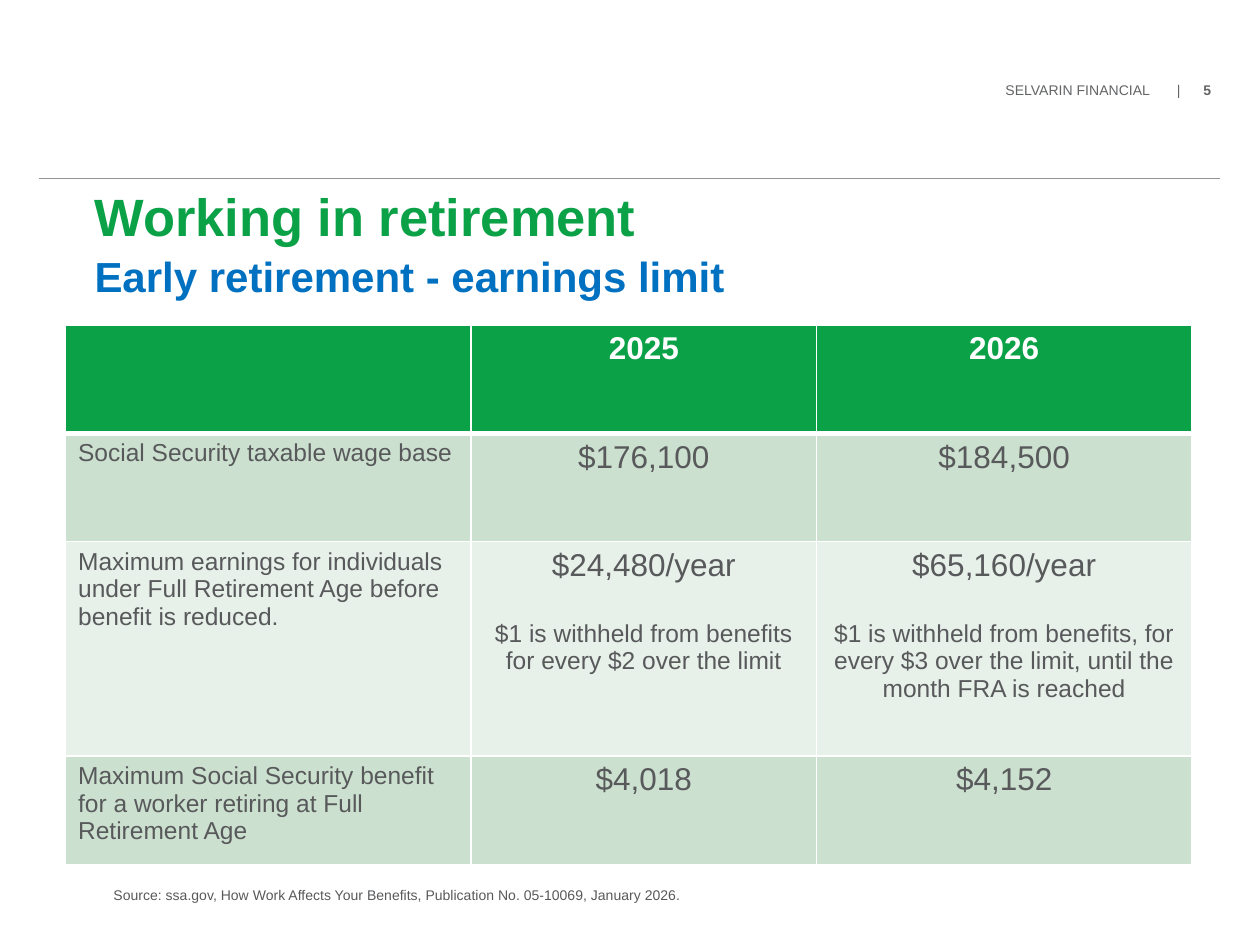
from dataclasses import dataclass

from lxml import etree
from pptx import Presentation
from pptx.dml.color import RGBColor
from pptx.enum import shapes, text
from pptx.oxml import ns
from pptx.util import Inches, Pt


@dataclass(frozen=True)
class Theme:
    font: str = "Arial"
    green: str = "0AA147"
    blue: str = "0070C0"
    body: str = "58595B"
    header: str = "636466"
    rule: str = "929497"
    white: str = "FFFFFF"
    band_dark: str = "CCE0CF"
    band_light: str = "E7F0E9"
    title_size: int = 30
    subtitle_size: int = 24
    figure_size: int = 18
    label_size: int = 14
    small_size: int = 8


theme = Theme()


def style(font, size, color, bold=False):
    font.name = theme.font
    font.size = Pt(size)
    font.bold = bold
    font.color.rgb = RGBColor.from_string(color)


def set_border(cell, side, points):
    """Draw a white border; side is L, R, T or B."""
    line = etree.Element(ns.qn(f"a:ln{side}"), w=str(Pt(points)))
    fill = etree.SubElement(line, ns.qn("a:solidFill"))
    etree.SubElement(fill, ns.qn("a:srgbClr"), val=theme.white)
    cell._tc.get_or_add_tcPr().append(line)


prs = Presentation()
prs.slide_width, prs.slide_height = Inches(10), Inches(7.5)
slide = prs.slides.add_slide(prs.slide_layouts.get_by_name("Title Only"))

# Page header and rule
page_header = slide.shapes.add_textbox(Inches(7.97), Inches(0.64), Inches(1.74), Inches(0.15))
frame = page_header.text_frame
frame.word_wrap = True
frame.margin_left = frame.margin_top = Inches(0.01)
frame.margin_right = frame.margin_bottom = 0
line = frame.paragraphs[0]
tabs = etree.SubElement(line._p.get_or_add_pPr(), ns.qn("a:tabLst"))
for stop in (1.36, 1.57):
    etree.SubElement(tabs, ns.qn("a:tab"), pos=str(Inches(stop)), algn="l")
style(line.font, theme.small_size, theme.header)
line.add_run().text = "SELVARIN FINANCIAL\t|\t"
page_number = line.add_run()
page_number.text = "5"
page_number.font.bold = True

rule = slide.shapes.add_connector(
    shapes.MSO_CONNECTOR.STRAIGHT, Inches(0.31), Inches(1.42), Inches(9.68), Inches(1.42))
rule.line.color.rgb = RGBColor.from_string(theme.rule)
rule.line.width = Pt(0.5)
etree.SubElement(rule._element.spPr, ns.qn("a:effectLst"))

# Title
title = slide.shapes.title
title.left, title.top = Inches(0.75), Inches(1.53)
title.width, title.height = Inches(8.5), Inches(1.05)
frame = title.text_frame
frame.auto_size = text.MSO_AUTO_SIZE.NONE
frame.vertical_anchor = text.MSO_ANCHOR.TOP
frame.margin_left = frame.margin_top = frame.margin_right = frame.margin_bottom = 0
heading = frame.paragraphs[0]
heading.alignment = text.PP_ALIGN.LEFT
heading.line_spacing = Pt(31)
main_title = heading.add_run()
main_title.text = "Working in retirement"
style(main_title.font, theme.title_size, theme.green, True)
heading.add_line_break()
subtitle = heading.add_run()
subtitle.text = "Early retirement - earnings limit"
style(subtitle.font, theme.subtitle_size, theme.blue, True)

# Earnings table: each cell lists its paragraphs
rows = [
    [[], ["2025"], ["2026"]],
    [["Social Security taxable wage base"], ["$176,100"], ["$184,500"]],
    [["Maximum earnings for individuals under Full Retirement Age before benefit is reduced."],
     ["$24,480/year", "$1 is withheld from benefits for every $2 over the limit"],
     ["$65,160/year",
      "$1 is withheld from benefits, for every $3 over the limit, until the month FRA is reached"]],
    [["Maximum Social Security benefit for a worker retiring at Full Retirement Age"],
     ["$4,018"], ["$4,152"]],
]
col_widths = [3.22, 2.74, 2.98]
row_heights = [0.86, 0.86, 1.7, 0.86]
table = slide.shapes.add_table(
    len(rows), len(col_widths), Inches(0.52), Inches(2.58),
    Inches(sum(col_widths)), Inches(sum(row_heights))).table
for column, width in zip(table.columns, col_widths):
    column.width = Inches(width)
for row, height in zip(table.rows, row_heights):
    row.height = Inches(height)

for r, row in enumerate(rows):
    is_header = r == 0
    band = theme.green if is_header else theme.band_dark if r % 2 else theme.band_light
    for c, entries in enumerate(row):
        cell = table.cell(r, c)
        for side in "LRTB":
            heavy = (is_header and side == "B") or (r == 1 and side == "T")
            set_border(cell, side, 3 if heavy else 1)
        cell.fill.solid()
        cell.fill.fore_color.rgb = RGBColor.from_string(band)
        for i, entry in enumerate(entries):
            paragraph = cell.text_frame.paragraphs[0] if i == 0 else cell.text_frame.add_paragraph()
            paragraph.text = entry
            paragraph.alignment = text.PP_ALIGN.CENTER if c else text.PP_ALIGN.LEFT
            if i:
                paragraph.space_before = Pt(21)
            size = theme.figure_size if c and i == 0 else theme.label_size
            style(paragraph.font, size, theme.white if is_header else theme.body, is_header)

# Source note
source = slide.shapes.add_textbox(Inches(0.9), Inches(6.81), Inches(8.58), Inches(0.31))
frame = source.text_frame
frame.word_wrap = True
frame.margin_left = frame.margin_top = frame.margin_right = frame.margin_bottom = 0
note = frame.paragraphs[0]
note.text = "Source: ssa.gov, How Work Affects Your Benefits, Publication No. 05-10069, January 2026."
note.line_spacing = Pt(26)
style(note.font, theme.small_size, theme.body)

prs.save("out.pptx")
